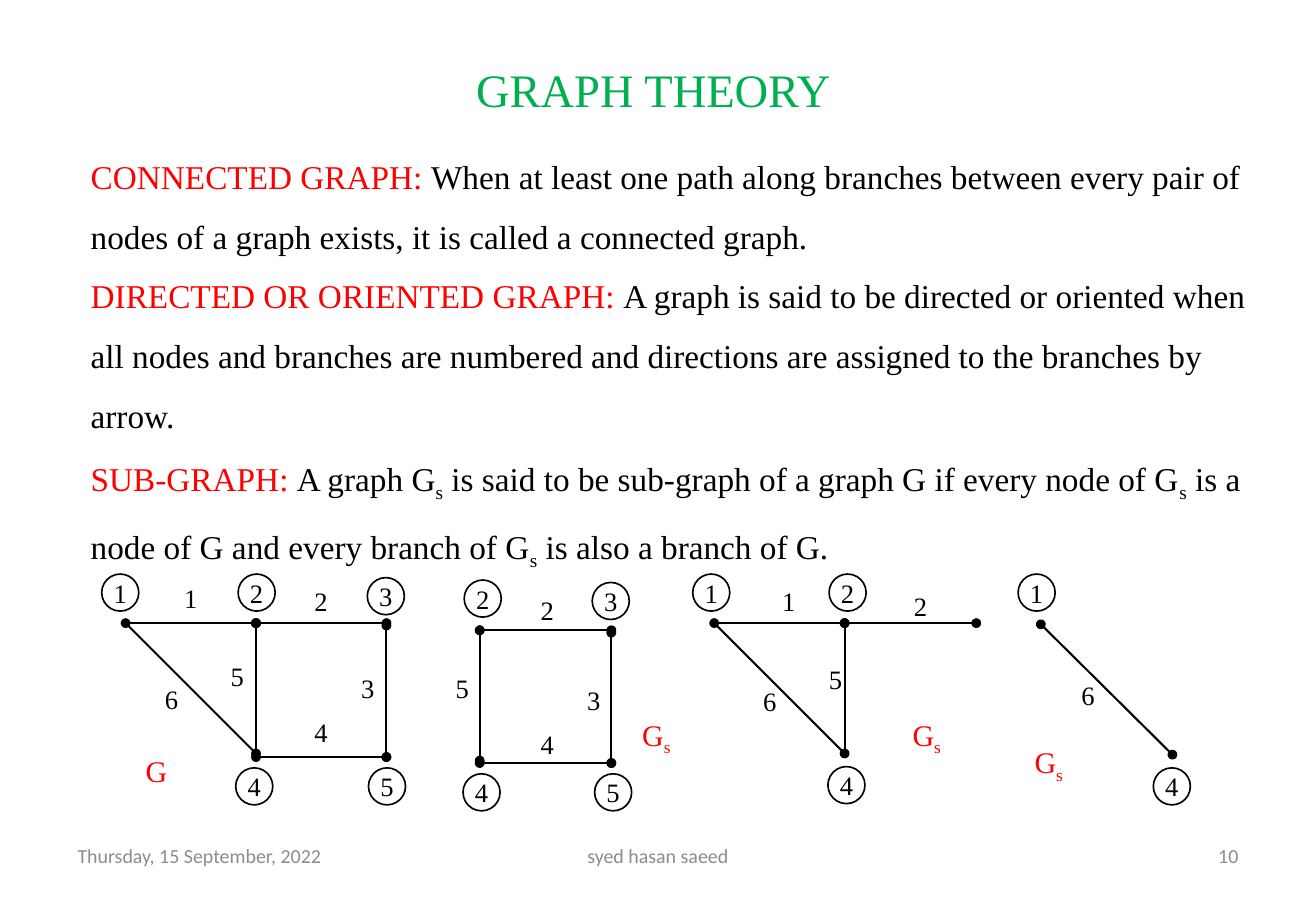
import pptx
import pptx.util
import pptx.dml.color
import pptx.enum.shapes
import pptx.enum.text
import pptx.oxml.ns
from dataclasses import dataclass
from lxml import etree

PX = 9144  # one px is a hundredth of an inch
SHAPE = pptx.enum.shapes.MSO_SHAPE
ANCHOR = pptx.enum.text.MSO_ANCHOR
ALIGN = pptx.enum.text.PP_ALIGN
qn = pptx.oxml.ns.qn


@dataclass(frozen=True)
class Theme:
    serif: str = "Times New Roman"
    sans: str = "Calibri"
    ink: str = "000000"
    title: str = "00B050"
    accent: str = "FF0000"
    muted: str = "8C8C8C"
    title_size: int = 28
    body_size: int = 20
    name_size: int = 18
    label_size: int = 16
    footer_size: int = 12
    branch_width: float = 1.25
    ring_width: float = 1


THEME = Theme()


def emu(*lengths):
    return [n * PX for n in lengths]


def rgb(color):
    return pptx.dml.color.RGBColor.from_string(color)


def add_runs(p, text, size, color, font=THEME.serif):
    """Add text to a paragraph; parts between ~ marks are subscripts."""
    for i, part in enumerate(text.split("~")):
        if not part:
            continue
        r = p.add_run()
        r.text = part
        formats = {"size": pptx.util.Pt(size), "name": font}
        for key, value in formats.items():
            setattr(r.font, key, value)
        r.font.color.rgb = rgb(color)
        if i % 2:
            r._r.get_or_add_rPr().set("baseline", "-25000")


def add_text(s, box, text, size, color, font=THEME.serif,
             align=ALIGN.LEFT, anchor=ANCHOR.TOP):
    tf = s.shapes.add_textbox(*emu(*box)).text_frame
    tf.word_wrap = True
    tf.vertical_anchor = anchor
    p = tf.paragraphs[0]
    p.alignment = align
    add_runs(p, text, size, color, font)


def add_title(s, box, text):
    add_text(s, box, text, THEME.title_size, THEME.title,
             align=ALIGN.CENTER, anchor=ANCHOR.MIDDLE)


def add_definitions(s, box, definitions):
    tf = s.shapes.add_textbox(*emu(*box)).text_frame
    tf.word_wrap = True
    for i, (term, meaning) in enumerate(definitions):
        p = tf.add_paragraph() if i else tf.paragraphs[0]
        p.line_spacing = 1.5
        add_runs(p, term + ": ", THEME.body_size, THEME.accent)
        add_runs(p, meaning, THEME.body_size, THEME.ink)


def add_branch(s, start, end, dots=True):
    c = s.shapes.add_connector(pptx.enum.shapes.MSO_CONNECTOR.STRAIGHT,
                               *emu(*start, *end))
    c.line.color.rgb = rgb(THEME.ink)
    c.line.width = pptx.util.Pt(THEME.branch_width)
    spPr = c._element.spPr
    if dots:
        for tag in ("a:headEnd", "a:tailEnd"):
            etree.SubElement(spPr.find(qn("a:ln")), qn(tag), type="oval")
    etree.SubElement(spPr, qn("a:effectLst"))


def add_node_number(s, x, y, number):
    sp = s.shapes.add_shape(SHAPE.OVAL, *emu(x, y, 31, 31))
    sp.shadow.inherit = False
    sp.fill.background()
    sp.line.color.rgb = rgb(THEME.ink)
    sp.line.width = pptx.util.Pt(THEME.ring_width)
    tf = sp.text_frame
    formats = {"margin_left": 0, "margin_right": 0, "margin_top": 0,
               "margin_bottom": 0, "word_wrap": False,
               "vertical_anchor": ANCHOR.MIDDLE}
    for key, value in formats.items():
        setattr(tf, key, value)
    p = tf.paragraphs[0]
    p.alignment = ALIGN.CENTER
    add_runs(p, number, THEME.label_size, THEME.ink)


def add_graph(s, origin, branches, nodes, labels, name):
    """Draw one graph; all positions are relative to its top left node."""
    ox, oy = origin
    for x1, y1, x2, y2, *dots in branches:
        add_branch(s, (ox + x1, oy + y1), (ox + x2, oy + y2), *dots)
    for number, (x, y) in nodes.items():
        add_node_number(s, ox + x, oy + y, number)
    for number, (x, y) in labels.items():
        add_text(s, (ox + x, oy + y, 47, 37), number,
                 THEME.label_size, THEME.ink)
    text, x, y = name
    add_text(s, (ox + x, oy + y, 63, 40), text, THEME.name_size, THEME.accent)


def add_footer(s, box, date, author, number):
    x, y, w, h = box
    side, middle = 257, 348
    parts = [(x, side, date, ALIGN.LEFT),
             (x + (w - middle) // 2, middle, author, ALIGN.CENTER),
             (x + w - side, side, number, ALIGN.RIGHT)]
    for left, width, text, align in parts:
        add_text(s, (left, y, width, h), text, THEME.footer_size, THEME.muted,
                 THEME.sans, align, ANCHOR.MIDDLE)


DEFINITIONS = [
    ("CONNECTED GRAPH",
     "When at least one path along branches between every pair of nodes of "
     "a graph exists, it is called a connected graph."),
    ("DIRECTED OR ORIENTED GRAPH",
     "A graph is said to be directed or oriented when all nodes and branches "
     "are numbered and directions are assigned to the branches by arrow."),
    ("SUB-GRAPH",
     "A graph G~s~ is said to be sub-graph of a graph G if every node of "
     "G~s~ is a node of G and every branch of G~s~ is also a branch of G."),
]

# Branches are x1, y1, x2, y2 and, where the ends are bare, False
GRAPHS = [
    dict(origin=(105, 521),
         branches=[(0, 0, 109, 0), (109, 0, 218, 0), (218, 112, 218, 2),
                   (109, 109, 109, 0), (109, 112, 218, 112),
                   (0, 0, 109, 109, False)],
         nodes={"1": (-20, -41), "2": (94, -41), "3": (202, -38),
                "4": (92, 121), "5": (203, 121)},
         labels={"1": (39, -39), "2": (148, -37), "3": (187, 36),
                 "4": (148, 73), "5": (78, 26), "6": (23, 45)},
         name=("G", 7, 103)),
    dict(origin=(401, 527),
         branches=[(0, 0, 110, 0), (110, 111, 110, 2), (0, 109, 0, 0),
                   (0, 111, 110, 111)],
         nodes={"2": (-13, -42), "3": (94, -40), "4": (-14, 120),
                "5": (96, 120)},
         labels={"2": (41, -35), "3": (80, 40), "4": (41, 77),
                 "5": (-30, 30)},
         name=("G~s~", 126, 67)),
    dict(origin=(597, 521),
         branches=[(0, 0, 109, 0), (109, 0, 219, 0), (109, 109, 109, 0),
                   (0, 0, 109, 109, False)],
         nodes={"1": (-18, -41), "2": (96, -41), "4": (95, 120)},
         labels={"1": (47, -37), "2": (157, -33), "5": (86, 28),
                 "6": (31, 47)},
         name=("G~s~", 156, 73)),
    dict(origin=(870, 522),
         branches=[(0, 0, 110, 109)],
         nodes={"1": (-19, -42), "4": (94, 120)},
         labels={"6": (24, 41)},
         name=("G~s~", -15, 95)),
]


def main():
    prs = pptx.Presentation()
    prs.slide_width, prs.slide_height = emu(1100, 750)
    s = prs.slides.add_slide(prs.slide_layouts[6])
    add_footer(s, (55, 695, 990, 40),
               "Thursday, 15 September, 2022", "syed hasan saeed", "10")
    add_title(s, (26, 39, 1040, 70), "GRAPH THEORY")
    add_definitions(s, (66, 109, 1000, 364), DEFINITIONS)
    for graph in GRAPHS:
        add_graph(s, **graph)
    prs.save("out.pptx")


if __name__ == "__main__":
    main()
